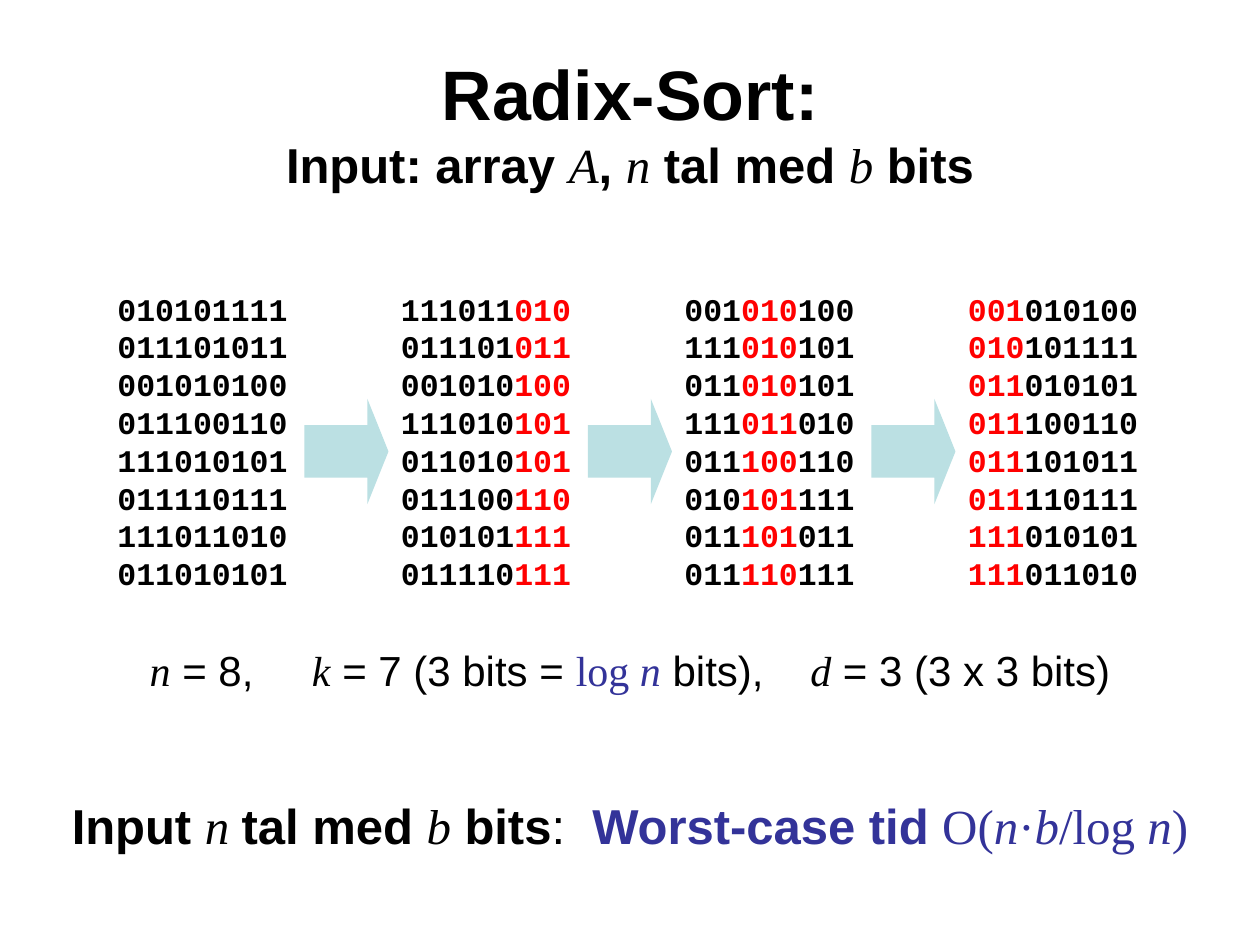
import pptx
import pptx.dml.color
import pptx.enum.shapes
import pptx.enum.text
import pptx.util
from dataclasses import dataclass

Pt = pptx.util.Pt
ALIGN = pptx.enum.text.PP_ALIGN
ANCHOR = pptx.enum.text.MSO_ANCHOR


@dataclass(frozen=True)
class Theme:
    sans: str = "Arial"
    serif: str = "Times New Roman"
    mono: str = "Courier New"
    ink: str = "000000"
    digit: str = "FF0000"
    accent: str = "333399"
    arrow: str = "BBE0E3"
    title_size: int = 40
    heading_size: int = 28
    body_size: int = 24
    bits_size: int = 18


THEME = Theme()
COLUMN_LEFT, COLUMN_TOP, COLUMN_PITCH = 60, 162, 162
DIGIT_BITS = 3

COLUMNS = [
    (None, "010101111 011101011 001010100 011100110 "
           "111010101 011110111 111011010 011010101"),
    (6, "111011010 011101011 001010100 111010101 "
        "011010101 011100110 010101111 011110111"),
    (3, "001010100 111010101 011010101 111011010 "
        "011100110 010101111 011101011 011110111"),
    (0, "001010100 010101111 011010101 011100110 "
        "011101011 011110111 111010101 111011010"),
]


def rgb(value):
    return pptx.dml.color.RGBColor.from_string(value)


def add_text_frame(slide, left, top, width, height, anchor=ANCHOR.TOP):
    shape = slide.shapes.add_textbox(Pt(left), Pt(top), Pt(width), Pt(height))
    frame = shape.text_frame
    frame.word_wrap = True
    frame.vertical_anchor = anchor
    return frame


def style_paragraph(paragraph, size, name, align, bold=False):
    paragraph.alignment = align
    paragraph.font.size = Pt(size)
    paragraph.font.name = name
    paragraph.font.bold = bold
    paragraph.font.color.rgb = rgb(THEME.ink)


def add_run(paragraph, text, color=THEME.ink):
    run = paragraph.add_run()
    run.text = text
    run.font.color.rgb = rgb(color)
    return run


def add_words(paragraph, text, size, bold=False, color=THEME.ink):
    run = add_run(paragraph, text, color)
    run.font.name = THEME.sans
    run.font.size = Pt(size)
    run.font.bold = bold
    return run


def add_math(paragraph, text, size, italic=True, color=THEME.ink):
    run = add_words(paragraph, text, size, color=color)
    run.font.name = THEME.serif
    run.font.italic = italic


def add_gap(paragraph, size, extra_points):
    run = add_words(paragraph, " ", size)
    run.font._element.set("spc", str(round(extra_points * 100)))


def add_title(slide):
    frame = add_text_frame(slide, 54, 24, 612, 91.5, ANCHOR.MIDDLE)
    paragraph = frame.paragraphs[0]
    size = THEME.heading_size
    style_paragraph(paragraph, size, THEME.sans, ALIGN.CENTER, bold=True)
    add_words(paragraph, "Radix-Sort:", THEME.title_size, bold=True)
    paragraph.add_line_break()
    for words, symbol in (("Input: array ", "A"), (", ", "n"), (" tal med ", "b")):
        add_words(paragraph, words, size, bold=True)
        add_math(paragraph, symbol, size)
    add_words(paragraph, " bits", size, bold=True)


def add_number_column(slide, left, digit_start, numbers):
    frame = add_text_frame(slide, left, COLUMN_TOP, 120, 180)
    for index, number in enumerate(numbers):
        paragraph = frame.add_paragraph() if index else frame.paragraphs[0]
        style_paragraph(paragraph, THEME.bits_size, THEME.mono, ALIGN.LEFT, bold=True)
        if digit_start is None:
            add_run(paragraph, number)
            continue
        digit_end = digit_start + DIGIT_BITS
        parts = (
            (number[:digit_start], THEME.ink),
            (number[digit_start:digit_end], THEME.digit),
            (number[digit_end:], THEME.ink),
        )
        for text, color in parts:
            if text:
                add_run(paragraph, text, color)


def add_pass_arrow(slide, left):
    arrow = slide.shapes.add_shape(
        pptx.enum.shapes.MSO_SHAPE.RIGHT_ARROW, Pt(left), Pt(228), Pt(48), Pt(60))
    arrow.adjustments[0] = 0.5
    arrow.adjustments[1] = 0.25
    arrow.fill.solid()
    arrow.fill.fore_color.rgb = rgb(THEME.arrow)
    arrow.line.fill.background()
    arrow.shadow.inherit = False


def add_parameters(paragraph):
    size = THEME.body_size
    style_paragraph(paragraph, size, THEME.sans, ALIGN.CENTER)
    add_math(paragraph, "n", size)
    add_words(paragraph, " = 8,", size)
    add_gap(paragraph, size, 26.7)
    add_math(paragraph, "k", size)
    add_words(paragraph, " = 7 (3 bits = ", size)
    add_math(paragraph, "log ", size, italic=False, color=THEME.accent)
    add_math(paragraph, "n", size, color=THEME.accent)
    add_words(paragraph, " bits),", size)
    add_gap(paragraph, size, 20)
    add_math(paragraph, "d", size)
    add_words(paragraph, " = 3 (3 x 3 bits)", size)


def add_running_time(paragraph):
    size = THEME.heading_size
    style_paragraph(paragraph, size, THEME.sans, ALIGN.CENTER)
    paragraph.space_before = Pt(57.5)
    add_words(paragraph, "Input ", size, bold=True)
    add_math(paragraph, "n ", size)
    add_words(paragraph, "tal med ", size, bold=True)
    add_math(paragraph, "b", size)
    add_words(paragraph, " bits", size, bold=True)
    add_words(paragraph, ":", size)
    add_gap(paragraph, size, 7.8)
    add_words(paragraph, "Worst-case tid ", size, bold=True, color=THEME.accent)
    for text in ("O(", "n", "·", "b", "/log ", "n", ")"):
        add_math(paragraph, text, size, italic=text in ("n", "b"), color=THEME.accent)


def add_analysis(slide):
    frame = add_text_frame(slide, 0, 365, 720, 129.6)
    add_parameters(frame.paragraphs[0])
    add_running_time(frame.add_paragraph())


def main():
    presentation = pptx.Presentation()
    presentation.slide_width = Pt(720)
    presentation.slide_height = Pt(540)
    slide = presentation.slides.add_slide(presentation.slide_layouts[6])
    add_title(slide)
    for index, (digit_start, numbers) in enumerate(COLUMNS):
        left = COLUMN_LEFT + index * COLUMN_PITCH
        add_number_column(slide, left, digit_start, numbers.split())
        if index:
            add_pass_arrow(slide, left - 48)
    add_analysis(slide)
    presentation.save("out.pptx")


if __name__ == "__main__":
    main()
